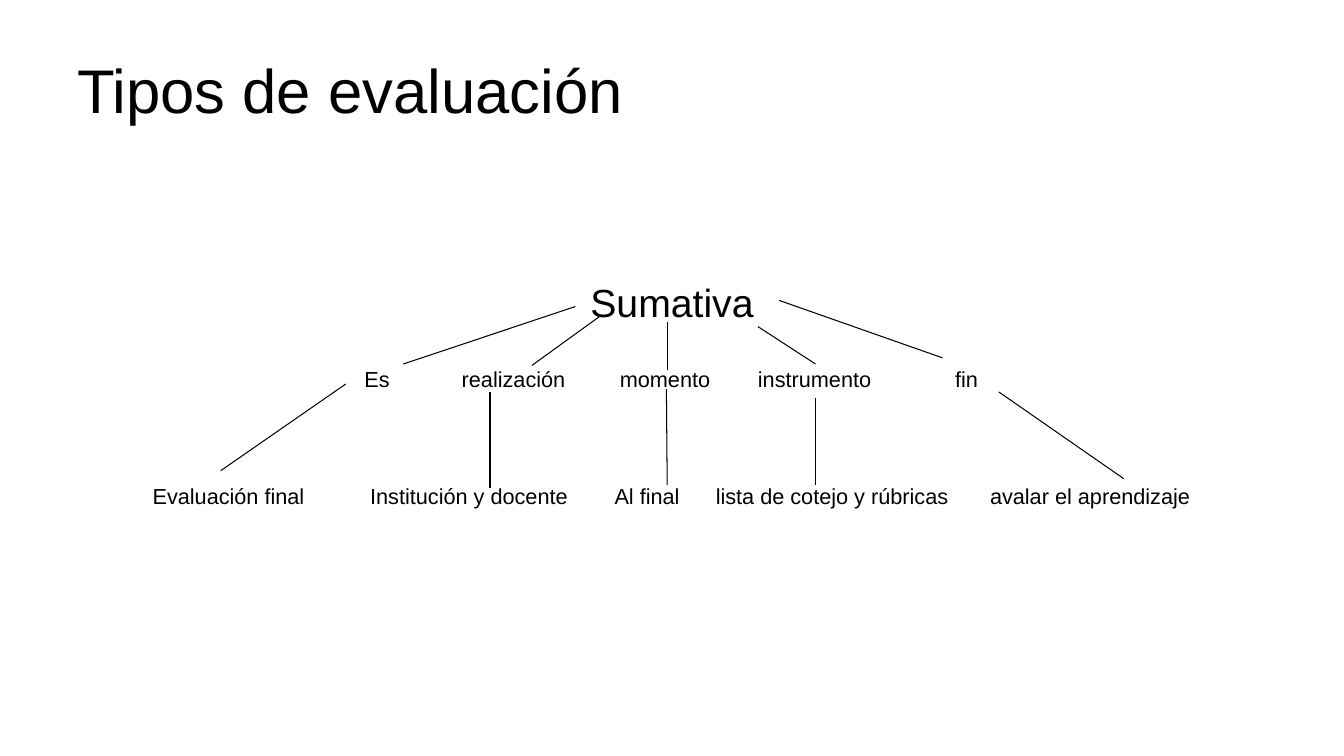
from pptx import Presentation
from pptx.dml.color import RGBColor
from pptx.enum.shapes import MSO_CONNECTOR
from pptx.enum.text import MSO_ANCHOR as ANCHOR, MSO_AUTO_SIZE as AUTO, PP_ALIGN as ALIGN
from pptx.oxml.ns import qn
from pptx.util import Pt
from lxml import etree

BLACK = RGBColor(0, 0, 0)
FONT = "Arial"
LABEL_W, LABEL_H = 180, 20
TOPIC_H = 36

# Each row: its middle height, then each word with its centre, in the box
ASPECTS = (144.5, [
    ("Es", 221.3), ("realización", 318.8), ("momento", 427),
    ("instrumento", 533.8), ("fin", 642.4)])
ANSWERS = (228.3, [
    ("Evaluación final", 115.2), ("Institución y docente", 287),
    ("Al final", 414.2), ("lista de cotejo y rúbricas", 546.3),
    ("avalar el aprendizaje", 730.6)])

# Branches as x1, y1, x2, y2 in the box
BRANCHES = [
    # Topic to aspects
    (363, 92, 240, 133), (380.4, 99, 332, 134), (428.6, 102.7, 428.6, 137.2),
    (493.4, 106.3, 534.5, 133), (508.6, 87.6, 625.2, 128.6),
    # Aspects to answers
    (199, 147.3, 109.7, 209.2), (302, 153, 302, 221.5), (428, 151, 428.6, 219.3),
    (534.5, 157.4, 534.5, 219.3), (665.5, 153, 754.8, 215),
]


def write(sp, box, text, size, align, inset=0):
    sp.left, sp.top, sp.width, sp.height = map(Pt, box)
    tf = sp.text_frame
    tf.word_wrap = True
    tf.auto_size = AUTO.NONE
    tf.vertical_anchor = ANCHOR.MIDDLE
    tf.margin_left = tf.margin_right = Pt(inset)
    tf.margin_top = tf.margin_bottom = 0
    p = tf.paragraphs[0]
    p.text = text
    p.alignment = align
    p.line_spacing = 0.9
    p.space_before = p.space_after = Pt(0)
    for r in p.runs:
        r.font.name = FONT
        r.font.size = Pt(size)
        r.font.bold = False
        r.font.color.rgb = BLACK


def add_title(s, left, top, width, height):
    write(s.shapes.title, (left, top, width, height),
          "Tipos de evaluación", 44, ALIGN.LEFT, 7.2)


def add_concept_map(s, left, top, width):
    # Topic
    write(s.placeholders[1], (left, top + 90.6 - TOPIC_H / 2, width, TOPIC_H),
          "Sumativa", 28, ALIGN.CENTER)

    # Rows of words
    for middle, labels in (ASPECTS, ANSWERS):
        for text, center in labels:
            box = (left + center - LABEL_W / 2, top + middle - LABEL_H / 2,
                   LABEL_W, LABEL_H)
            write(s.shapes.add_textbox(0, 0, 0, 0), box, text, 15.5, ALIGN.CENTER)

    # Branches
    for x1, y1, x2, y2 in BRANCHES:
        line = s.shapes.add_connector(
            MSO_CONNECTOR.STRAIGHT,
            Pt(left + x1), Pt(top + y1), Pt(left + x2), Pt(top + y2))
        line.line.color.rgb = BLACK
        line.line.width = Pt(0.75)
        etree.SubElement(line._element.spPr, qn("a:effectLst"))


def main():
    prs = Presentation()
    prs.slide_width, prs.slide_height = Pt(960), Pt(540)
    s = prs.slides.add_slide(prs.slide_layouts[0])
    add_title(s, 48, 7, 864, 119)
    add_concept_map(s, 48, 127, 864)
    prs.save("out.pptx")


if __name__ == "__main__":
    main()
